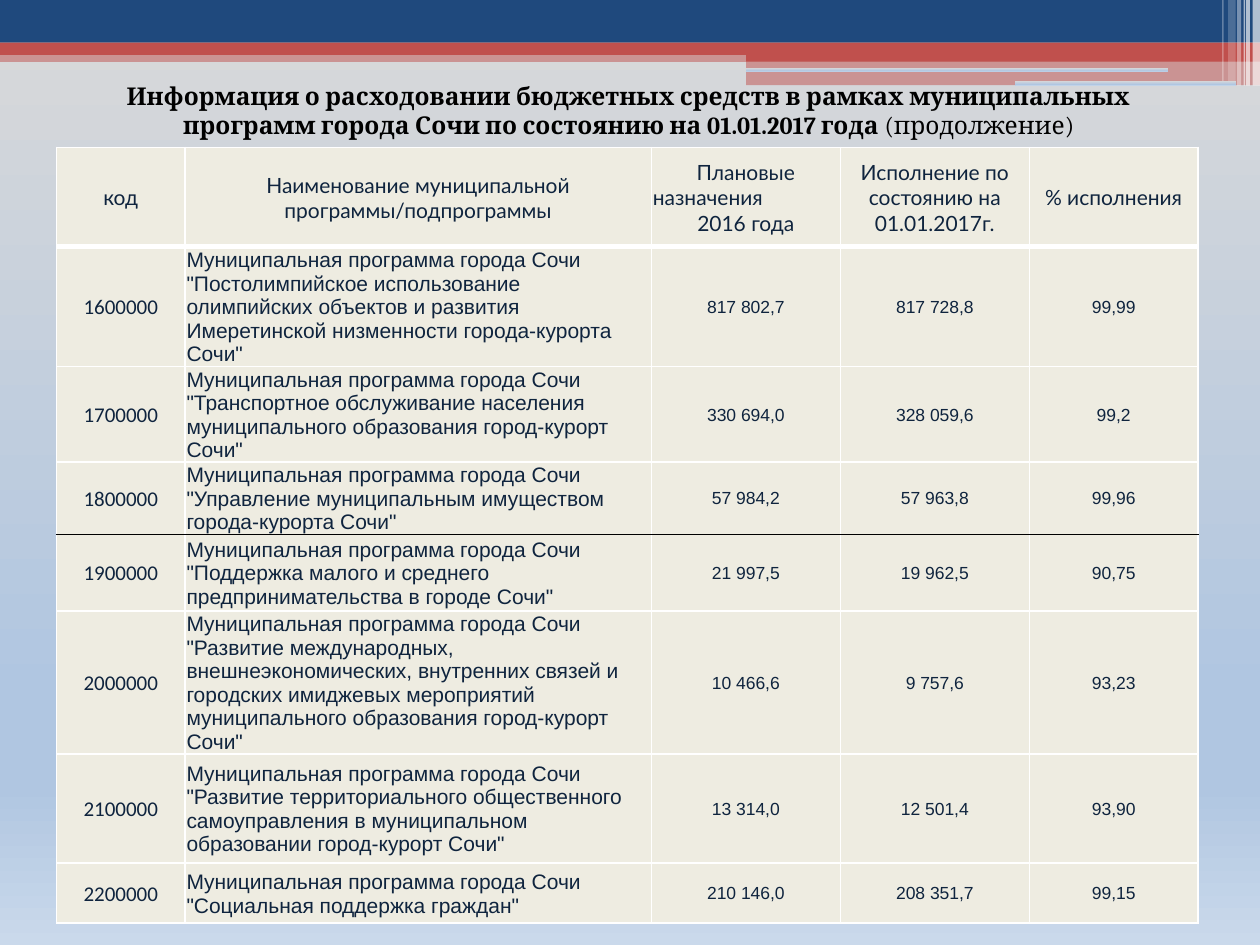
import pptx
import pptx.dml.color
import pptx.enum.shapes
import pptx.enum.text
import pptx.oxml.ns
import pptx.util
from lxml import etree

Cm = pptx.util.Cm
Pt = pptx.util.Pt
qn = pptx.oxml.ns.qn
Shape = pptx.enum.shapes.MSO_SHAPE
Align = pptx.enum.text.PP_ALIGN
Anchor = pptx.enum.text.MSO_ANCHOR

COLORS = {
    "navy": "1F497D", "red": "C0504D", "white": "FFFFFF", "black": "000000",
    "ink": "0F243E", "cream": "EEECE1",
}
STOPS = [(0, "D9D9D9"), (74, "B0C6E1"), (83, "B0C6E1"), (100, "CAD9EB")]

HEADS = [
    "код",
    "Наименование муниципальной программы/подпрограммы",
    "Плановые\nназначения\n2016 года",
    "Исполнение по состоянию на 01.01.2017г.",
    "% исполнения",
]
PREFIX = "Муниципальная программа города Сочи "
ROWS = [
    ("1600000", '"Постолимпийское использование олимпийских объектов и развития '
     'Имеретинской низменности города-курорта Сочи"', "817 802,7", "817 728,8", "99,99"),
    ("1700000", '"Транспортное обслуживание населения муниципального образования '
     'город-курорт Сочи"', "330 694,0", "328 059,6", "99,2"),
    ("1800000", '"Управление муниципальным имуществом города-курорта Сочи"',
     "57 984,2", "57 963,8", "99,96"),
    ("1900000", '"Поддержка малого и среднего предпринимательства в городе Сочи"',
     "21 997,5", "19 962,5", "90,75"),
    ("2000000", '"Развитие международных, внешнеэкономических, внутренних связей и '
     'городских имиджевых мероприятий муниципального образования город-курорт Сочи"',
     "10 466,6", "9 757,6", "93,23"),
    ("2100000", '"Развитие территориального общественного самоуправления в '
     'муниципальном образовании город-курорт Сочи"', "13 314,0", "12 501,4", "93,90"),
    ("2200000", '"Социальная поддержка граждан"', "210 146,0", "208 351,7", "99,15"),
]
WIDTHS = [2.59, 9.4, 3.81, 3.81, 3.4]
HEIGHTS = [2, 2.42, 1.92, 1.45, 1.55, 2.88, 2.2, 1.21]
RULES = {0: ("white", 3), 3: ("black", 1)}  # special lines below these rows


def rgb(name):
    return pptx.dml.color.RGBColor.from_string(COLORS[name])


def write(para, text, font="Arial", size=12, color="ink", bold=False, align=Align.CENTER):
    para.alignment = align
    run = para.add_run()
    run.text = text
    run.font.name = font
    run.font.size = Pt(size)
    run.font.bold = bold
    run.font.color.rgb = rgb(color)


def blend(fill, root):
    """Give fill, which lies inside root, the sky gradient from top to bottom."""
    fill.gradient()
    fill.gradient_angle = 270
    stops = next(root.iter(qn("a:gsLst")))
    for old in list(stops):
        stops.remove(old)
    for pos, color in STOPS:
        stop = etree.SubElement(stops, qn("a:gs"), pos=str(pos * 1000))
        etree.SubElement(stop, qn("a:srgbClr"), val=color)


def bar(slide, box, color=None, alpha=100):
    """Add a plain bar, or a rounded one in the sky gradient if no colour is given."""
    kind = Shape.RECTANGLE if color else Shape.ROUNDED_RECTANGLE
    shape = slide.shapes.add_shape(kind, *map(Cm, box))
    shape.shadow.inherit = False
    shape.line.fill.background()
    if not color:
        blend(shape.fill, shape.element)
        return
    shape.fill.solid()
    shape.fill.fore_color.rgb = rgb(color)
    if alpha < 100:
        tint = next(shape.element.spPr.iter(qn("a:srgbClr")))
        etree.SubElement(tint, qn("a:alpha"), val=str(alpha * 1000))


def banner(slide, left, top, width):
    bar(slide, (left, top + 1.02, width, 0.23), "red", 50)
    bar(slide, (left, top, width, 0.86), "navy")
    bar(slide, (left, top + 0.86, width, 0.25), "red")
    half = left + 15.04
    bar(slide, (half, top + 0.99, left + width - half, 0.25), "red")
    bar(slide, (half, top + 1.22, left + width - half, 0.5), "red", 50)
    bar(slide, (half, top + 1.37, 8.5, 0.08))
    bar(slide, (left + 20.47, top + 1.63, 4.45, 0.1))
    stripes = [(0.15, 0.15, 1.73, 65), (0.28, 0.08, 1.73, 65), (0.33, 0.03, 1.73, 60),
               (0.46, 0.08, 1.73, 40), (0.64, 0.15, 1.63, 20), (0.76, 0.03, 1.63, 30)]
    for back, wide, high, alpha in stripes:
        bar(slide, (left + width - back, top, wide, high), "white", alpha)


def title(slide, left, top, width, height):
    box = slide.shapes.add_textbox(*map(Cm, (left, top, width, height)))
    box.text_frame.word_wrap = True
    para = box.text_frame.paragraphs[0]
    look = {"font": "Cambria", "size": 14, "color": "black"}
    write(para, "Информация о расходовании бюджетных средств в рамках муниципальных "
          "программ города Сочи по состоянию на 01.01.2017 года ", bold=True, **look)
    write(para, "(продолжение)", **look)


def edge(cell, row):
    """Draw the four borders of a cell in the given row."""
    plain = ("white", 1)
    sides = {"L": plain, "R": plain, "T": RULES.get(row - 1, plain), "B": RULES.get(row, plain)}
    props = cell._tc.get_or_add_tcPr()
    for spot, (side, (color, width)) in enumerate(sides.items()):
        line = etree.Element(qn("a:ln" + side), w=str(Pt(width)))
        fill = etree.SubElement(line, qn("a:solidFill"))
        etree.SubElement(fill, qn("a:srgbClr"), val=COLORS[color])
        props.insert(spot, line)


def put(cell, text, row, col):
    """Fill a cell and write its text in the style of its row and column."""
    cell.fill.solid()
    cell.fill.fore_color.rgb = rgb("cream")
    edge(cell, row)
    cell.vertical_anchor = Anchor.MIDDLE
    cell.margin_left = cell.margin_right = cell.margin_top = Cm(0.03)
    cell.margin_bottom = 0
    frame = cell.text_frame
    if row == 0:
        for num, line in enumerate(text.split("\n")):
            para = frame.add_paragraph() if num else frame.paragraphs[0]
            write(para, line, font="Lato", align=Align.LEFT if num == 1 else Align.CENTER)
    elif col == 0:
        write(frame.paragraphs[0], text, font="Calibri")
    elif col == 1:
        write(frame.paragraphs[0], PREFIX + text, align=Align.LEFT)
    else:
        write(frame.paragraphs[0], text, size=10)


def budget(slide, left, top):
    size = (Cm(sum(WIDTHS)), Cm(sum(HEIGHTS)))
    frame = slide.shapes.add_table(len(HEIGHTS), len(WIDTHS), Cm(left), Cm(top), *size)
    table = frame.table
    for col, width in zip(table.columns, WIDTHS):
        col.width = Cm(width)
    for row, height in zip(table.rows, HEIGHTS):
        row.height = Cm(height)
    for row, texts in enumerate([HEADS, *ROWS]):
        for col, text in enumerate(texts):
            put(table.cell(row, col), text, row, col)


def main():
    deck = pptx.Presentation()
    deck.slide_width, deck.slide_height = Cm(25.4), Cm(19.05)
    slide = deck.slides.add_slide(deck.slide_layouts[6])
    blend(slide.background.fill, slide.element)
    banner(slide, 0, 0, 25.4)
    budget(slide, 1.14, 2.97)
    title(slide, 1.37, 1.5, 22.61, 1.45)
    deck.save("out.pptx")


if __name__ == "__main__":
    main()
